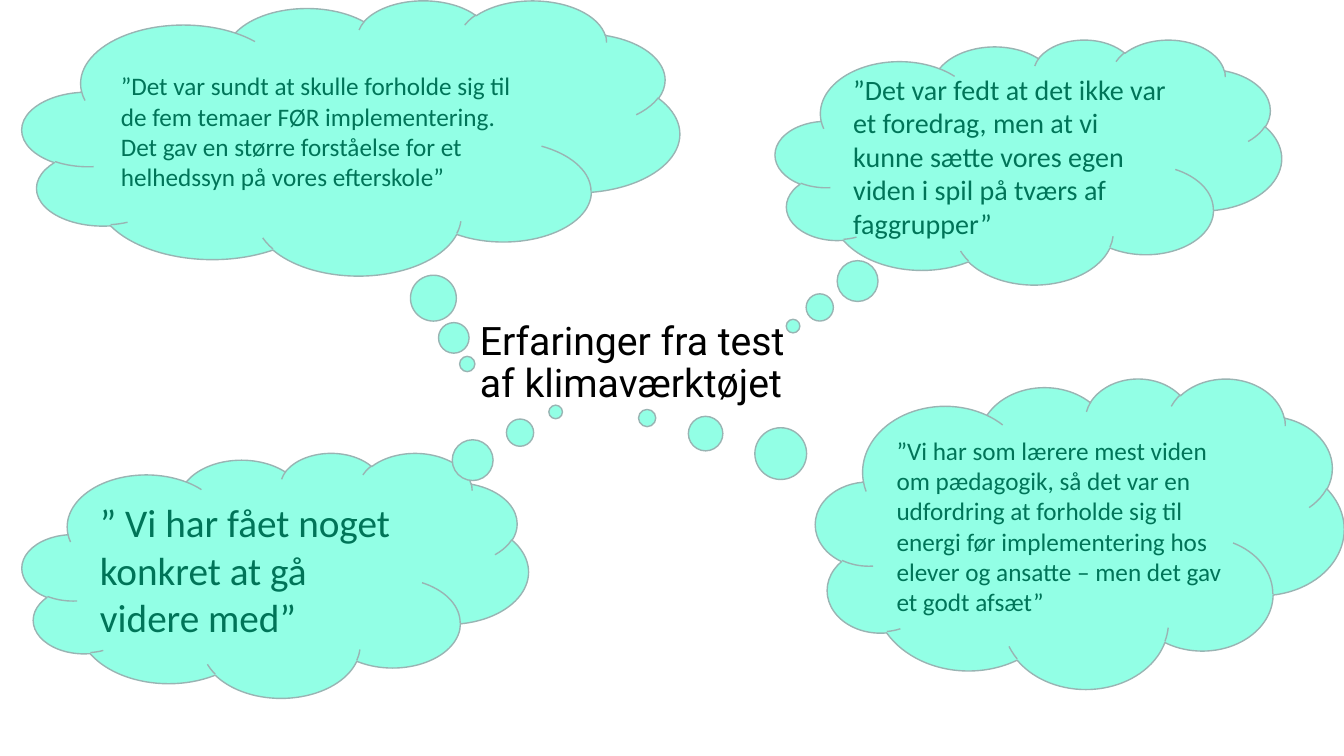
from dataclasses import dataclass

from pptx import Presentation
from pptx.dml.color import RGBColor
from pptx.enum.shapes import MSO_SHAPE
from pptx.enum.text import MSO_ANCHOR, PP_ALIGN
from pptx.slide import Slide
from pptx.util import Inches, Pt

CLOUD = MSO_SHAPE.CLOUD_CALLOUT
MIDDLE = MSO_ANCHOR.MIDDLE
LEFT = PP_ALIGN.LEFT


@dataclass(frozen=True)
class Theme:
    cloud: RGBColor = RGBColor(0x92, 0xFF, 0xE5)
    outline: RGBColor = RGBColor(0x99, 0xB4, 0xB3)
    quote: RGBColor = RGBColor(0x00, 0x74, 0x58)
    title: RGBColor = RGBColor(0x00, 0x00, 0x00)
    quote_font: str = "Calibri"
    title_font: str = "Roboto"
    small: int = 18
    medium: int = 20
    large: int = 28


@dataclass(frozen=True)
class Quote:
    text: str
    left: float
    top: float
    width: float
    height: float
    tail: tuple[float, float]  # tip offset from the centre, in cloud sizes
    size: int


THEME = Theme()
QUOTES = [
    Quote("”Det var fedt at det ikke var et foredrag, men at vi kunne sætte vores "
          "egen viden i spil på tværs af faggrupper”",
          7.69, 0.39, 5.02, 2.43, (-0.465, 0.671), THEME.medium),
    Quote("”Det var sundt at skulle forholde sig til de fem temaer FØR "
          "implementering. Det gav en større forståelse for et helhedssyn på "
          "vores efterskole”",
          0.22, 0, 6.52, 2.73, (0.177, 0.823), THEME.small),
    Quote("”Vi har som lærere mest viden om pædagogik, så det var en udfordring "
          "at forholde sig til energi før implementering hos elever og ansatte "
          "– men det gav et godt afsæt”",
          8.09, 3.75, 5.24, 3.08, (-0.819, -0.371), THEME.small),
    Quote("” Vi har fået noget konkret at gå videre med”",
          0.22, 4.49, 5.02, 2.43, (0.554, -0.666), THEME.large),
]


def add_quote(slide: Slide, quote: Quote) -> None:
    shape = slide.shapes.add_shape(
        CLOUD, Inches(quote.left), Inches(quote.top),
        Inches(quote.width), Inches(quote.height))
    shape.adjustments[0], shape.adjustments[1] = quote.tail
    shape.shadow.inherit = False
    shape.fill.solid()
    shape.fill.fore_color.rgb = THEME.cloud
    shape.line.color.rgb = THEME.outline
    shape.line.width = Pt(1)

    frame = shape.text_frame
    frame.word_wrap = True
    frame.vertical_anchor = MIDDLE
    frame.margin_left = frame.margin_right = Inches(0.08)
    frame.margin_top = frame.margin_bottom = Inches(0.04)
    paragraph = frame.paragraphs[0]
    paragraph.text = quote.text
    paragraph.alignment = LEFT
    paragraph.font.name = THEME.quote_font
    paragraph.font.size = Pt(quote.size)
    paragraph.font.color.rgb = THEME.quote


def add_title(slide: Slide, text: str) -> None:
    box = slide.shapes.add_textbox(
        Inches(4.76), Inches(3.19), Inches(3.33), Inches(0.85))
    frame = box.text_frame
    frame.word_wrap = True
    frame.margin_left = frame.margin_right = Inches(0)
    frame.margin_top = frame.margin_bottom = Inches(0)
    paragraph = frame.paragraphs[0]
    paragraph.text = text
    paragraph.line_spacing = 0.9
    paragraph.font.name = THEME.title_font
    paragraph.font.size = Pt(THEME.large)
    paragraph.font.color.rgb = THEME.title


def main() -> None:
    presentation = Presentation()
    presentation.slide_width = Inches(13.33)
    presentation.slide_height = Inches(7.5)
    slide = presentation.slides.add_slide(presentation.slide_layouts[6])

    # Thought clouds around the central title
    for quote in QUOTES:
        add_quote(slide, quote)
    add_title(slide, "Erfaringer fra test af klimaværktøjet")

    presentation.save("out.pptx")


if __name__ == "__main__":
    main()
